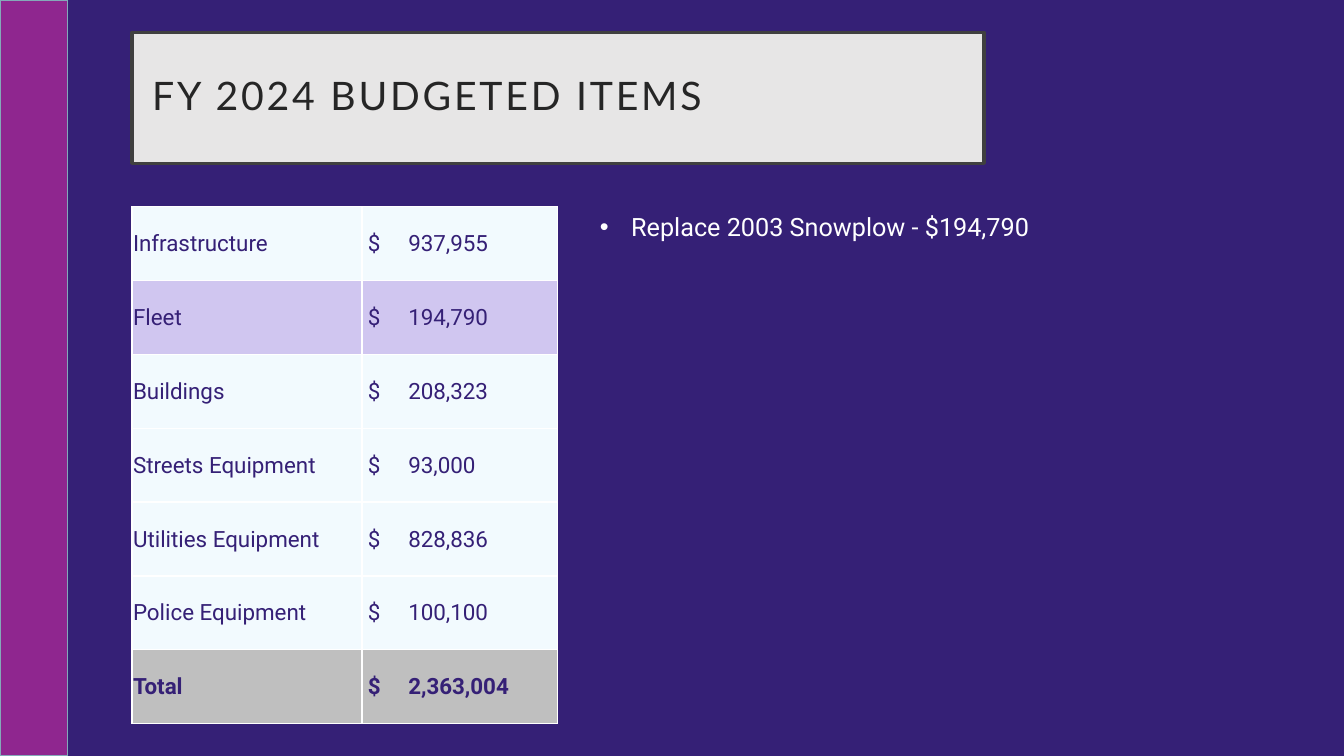
from dataclasses import dataclass

from lxml import etree
from pptx import Presentation
from pptx import util as u
from pptx.dml.color import RGBColor
from pptx.enum import shapes, text
from pptx.oxml import ns
from pptx.util import Inches


@dataclass(frozen=True)
class Theme:
    background: str = "352076"
    stripe: str = "8F268F"
    stripe_line: str = "84A9B9"
    title_fill: str = "E7E6E6"
    title_line: str = "404040"
    title_text: str = "262626"
    white: str = "FFFFFF"
    row: str = "F2FAFE"
    highlight: str = "D0C6F0"
    total: str = "BFBFBF"
    title_font: str = "Lato"
    body_font: str = "Roboto"
    title_size: int = 28
    body_size: int = 18
    table_size: int = 16


THEME = Theme()

BUDGET = [
    ("Infrastructure", "937,955"),
    ("Fleet", "194,790"),
    ("Buildings", "208,323"),
    ("Streets Equipment", "93,000"),
    ("Utilities Equipment", "828,836"),
    ("Police Equipment", "100,100"),
    ("Total", "2,363,004"),
]
ROW_FILLS = {"Fleet": THEME.highlight, "Total": THEME.total}


def set_fill(fill, color):
    fill.solid()
    fill.fore_color.rgb = RGBColor.from_string(color)


def set_line(line, color, width):
    set_fill(line.fill, color)
    line.width = u.Pt(width)


def place(shape, left, top, width, height):
    shape.left, shape.top = Inches(left), Inches(top)
    shape.width, shape.height = Inches(width), Inches(height)


def set_margins(target, left, top, right, bottom):
    target.margin_left, target.margin_top = Inches(left), Inches(top)
    target.margin_right, target.margin_bottom = Inches(right), Inches(bottom)


def write(paragraph, content, *, size, color, font=THEME.body_font, bold=False,
          tracking=None, line_spacing=1.0):
    paragraph.alignment = text.PP_ALIGN.LEFT
    paragraph.line_spacing = line_spacing
    paragraph.space_before = u.Pt(0)
    run = paragraph.add_run()
    run.text = content
    run.font.name = font
    run.font.size = u.Pt(size)
    run.font.bold = bold
    run.font.color.rgb = RGBColor.from_string(color)
    if tracking:
        run.font._element.set("spc", str(tracking * 100))


def add_bullet(paragraph, indent):
    properties = paragraph._p.get_or_add_pPr()
    properties.set("marL", str(Inches(indent)))
    properties.set("indent", str(-Inches(indent)))
    etree.SubElement(properties, ns.qn("a:buChar"), char="•")


def add_tab(paragraph, position):
    properties = paragraph._p.get_or_add_pPr()
    tabs = etree.SubElement(properties, ns.qn("a:tabLst"))
    etree.SubElement(tabs, ns.qn("a:tab"), pos=str(Inches(position)), algn="l")


def add_borders(cell, color, width):
    properties = cell._tc.get_or_add_tcPr()
    for side in ("lnL", "lnR", "lnT", "lnB"):
        line = etree.SubElement(properties, ns.qn(f"a:{side}"), w=str(u.Pt(width)))
        fill = etree.SubElement(line, ns.qn("a:solidFill"))
        etree.SubElement(fill, ns.qn("a:srgbClr"), val=color)


def add_stripe(slide):
    stripe = slide.shapes.add_shape(shapes.MSO_SHAPE.RECTANGLE, 0, 0, Inches(0.67), Inches(7.5))
    stripe.shadow.inherit = False
    set_fill(stripe.fill, THEME.stripe)
    set_line(stripe.line, THEME.stripe_line, 1)


def format_title(title, content):
    place(title, 1.31, 0.32, 8.45, 1.3)
    set_fill(title.fill, THEME.title_fill)
    set_line(title.line, THEME.title_line, 2.5)
    frame = title.text_frame
    set_margins(frame, 0.2, 0.2, 0.2, 0.2)
    frame.vertical_anchor = text.MSO_ANCHOR.MIDDLE
    write(frame.paragraphs[0], content, size=THEME.title_size, color=THEME.title_text,
          font=THEME.title_font, tracking=2, line_spacing=0.9)


def format_list(body, items):
    place(body, 5.85, 2.05, 6.17, 0.71)
    frame = body.text_frame
    frame.vertical_anchor = text.MSO_ANCHOR.TOP
    for index, item in enumerate(items):
        paragraph = frame.add_paragraph() if index else frame.paragraphs[0]
        add_bullet(paragraph, 0.31)
        write(paragraph, item, size=THEME.body_size, color=THEME.white)


def fill_cell(cell, content, fill, *, bold, left_margin, tab=None):
    add_borders(cell, THEME.white, 1)
    set_fill(cell.fill, fill)
    set_margins(cell, left_margin, 0.01, 0.01, 0)
    cell.vertical_anchor = text.MSO_ANCHOR.MIDDLE
    paragraph = cell.text_frame.paragraphs[0]
    if tab:
        add_tab(paragraph, tab)
    write(paragraph, content, size=THEME.table_size, color=THEME.background, bold=bold)


def add_budget_table(slide):
    frame = slide.shapes.add_table(len(BUDGET), 2, Inches(1.31), Inches(2.05),
                                   Inches(4.22), Inches(5.13))
    table = frame.table
    table.first_row = table.horz_banding = False
    for column, width in zip(table.columns, (2.28, 1.94)):
        column.width = Inches(width)
    for index, (item, amount) in enumerate(BUDGET):
        fill = ROW_FILLS.get(item, THEME.row)
        bold = item == "Total"
        fill_cell(table.cell(index, 0), item, fill, bold=bold, left_margin=0.01)
        fill_cell(table.cell(index, 1), f"$\t{amount}", fill, bold=bold,
                  left_margin=0.06, tab=0.4)


def main():
    presentation = Presentation()
    presentation.slide_width = Inches(13.33)
    presentation.slide_height = Inches(7.5)
    slide = presentation.slides.add_slide(presentation.slide_layouts[1])
    set_fill(slide.background.fill, THEME.background)
    add_stripe(slide)
    format_title(slide.shapes.title, "FY 2024 BUDGETED ITEMS")
    add_budget_table(slide)
    format_list(slide.placeholders[1], ["Replace 2003 Snowplow - $194,790"])
    presentation.save("out.pptx")


if __name__ == "__main__":
    main()
